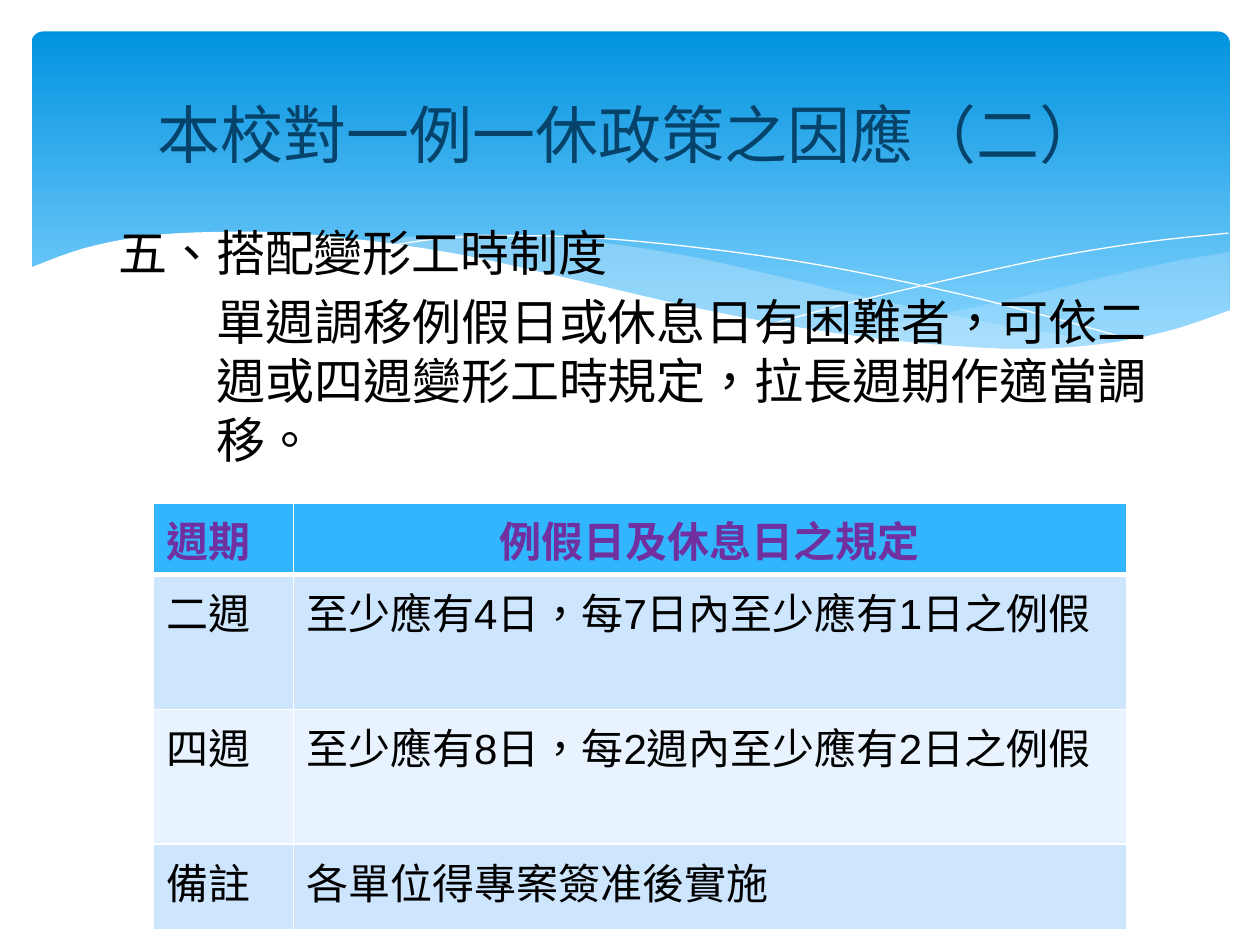
from dataclasses import dataclass
from lxml.etree import SubElement
from pptx import Presentation
from pptx.dml.color import RGBColor
from pptx.enum.shapes import MSO_SHAPE as Shape
from pptx.enum.text import MSO_ANCHOR as Anchor, PP_ALIGN as Align
from pptx.oxml import parse_xml
from pptx.oxml.ns import nsdecls, qn
from pptx.util import Inches, Pt


@dataclass(frozen=True)
class Theme:
    white: str = "FFFFFF"
    black: str = "000000"
    sky_top: str = "0293E0"
    sky_bottom: str = "83D3FE"
    mist: str = "C6E7FC"
    title: str = "06436B"
    header_text: str = "7030A0"
    header_fill: str = "31B6FD"
    bands: tuple = ("CEE5FE", "E8F3FF")
    font: str = "Arial"
    header_font: str = "Calibri"
    language: str = "zh-TW"
    title_size: int = 36
    body_size: int = 28
    table_size: int = 24


T = Theme()

RIGHT_WAVE_TOP = [(9.76, 2), (9.35, 2.07), (8.76, 2.2), (8.05, 2.37), (7.29, 2.53), (6.61, 2.65)]
RIGHT_WAVE_BASE = [(6.61, 2.65), (7.18, 2.73), (7.69, 2.77), (8.24, 2.77), (8.81, 2.73),
                   (9.28, 2.64), (9.76, 2.47)]
MID_WAVE_TOP = [(8.93, 2.73), (8.07, 2.6), (7.06, 2.4), (6.29, 2.22), (5.55, 2.05), (4.89, 1.94),
                (4.2, 1.87), (3.61, 1.86), (2.86, 1.91)]
MID_WAVE_BASE = [(2.86, 1.91), (3.62, 2.03), (4.49, 2.22), (5.3, 2.4), (6.01, 2.55), (6.8, 2.68),
                 (7.48, 2.76), (8.07, 2.79), (8.48, 2.78), (8.93, 2.73)]
FALLING_LINE = [(3.09, 1.95), (3.53, 1.89), (4.16, 1.87), (4.89, 1.9), (5.82, 2), (6.65, 2.13),
                (7.6, 2.33), (8.31, 2.51), (9.07, 2.72)]
RISING_LINE = [(6.13, 2.57), (6.72, 2.41), (7.48, 2.23), (8.36, 2.04), (9.1, 1.92), (9.75, 1.85)]
FRONT_WAVE = [(9.77, 2.46), (9.3, 2.62), (8.75, 2.73), (8.09, 2.77), (7.26, 2.72), (6.47, 2.62),
              (5.55, 2.45), (4.47, 2.2), (3.65, 2.02), (2.92, 1.91), (2.3, 1.85), (1.77, 1.84),
              (1.19, 1.87), (0.67, 1.97), (0.23, 2.13)]
FRONT_BASE = [(0.23, 3.29), (9.77, 3.29)]

ROWS = [
    (0.57, "週期", "例假日及休息日之規定"),
    (1.07, "二週", "至少應有4日，每7日內至少應有1日之例假"),
    (1.07, "四週", "至少應有8日，每2週內至少應有2日之例假"),
    (0.68, "備註", "各單位得專案簽准後實施"),
]


def rgb(color):
    return RGBColor.from_string(color)


def smooth_curve(points, steps=5):
    padded = [points[0], *points, points[-1]]
    curve = [points[0]]
    for a, b, c, d in zip(padded, padded[1:], padded[2:], padded[3:]):
        for i in range(1, steps + 1):
            t = i / steps
            curve.append(tuple(
                (2 * q + (r - p) * t + (2 * p - 5 * q + 4 * r - s) * t ** 2
                 + (3 * q - p - 3 * r + s) * t ** 3) / 2
                for p, q, r, s in zip(a, b, c, d)))
    return curve


def set_solid(sp, color, opacity=100):
    sp.fill.solid()
    sp.fill.fore_color.rgb = rgb(color)
    if opacity < 100:
        clr = sp.fill._xPr.find(qn("a:solidFill"))[0]
        SubElement(clr, qn("a:alpha")).set("val", str(opacity * 1000))


def add_path(s, box, points, closed=True):
    left, top = box[:2]
    pts = [(Inches(left + x), Inches(top + y)) for x, y in points]
    fb = s.shapes.build_freeform(*pts[0], scale=1.0)
    fb.add_line_segments(pts[1:], close=closed)
    sp = fb.convert_to_shape()
    sp.shadow.inherit = False
    return sp


def add_banner(s, box):
    left, top, width, height = box
    sp = s.shapes.add_shape(Shape.ROUNDED_RECTANGLE, Inches(left + 0.25), Inches(top + 0.25),
                            Inches(width - 0.49), Inches(height - 0.6))
    sp.adjustments[0] = 0.034
    sp.shadow.inherit = False
    sp.line.fill.background()
    sp.fill.gradient()
    sp.fill.gradient_angle = 270
    stops = zip(sp.fill.gradient_stops, (0, 0.9), (T.sky_top, T.sky_bottom))
    for stop, position, color in stops:
        stop.position = position
        stop.color.rgb = rgb(color)

    right_wave = smooth_curve(RIGHT_WAVE_TOP) + smooth_curve(RIGHT_WAVE_BASE)
    mid_wave = smooth_curve(MID_WAVE_TOP) + smooth_curve(MID_WAVE_BASE)
    for points, opacity in ((right_wave, 29), (mid_wave, 40)):
        sp = add_path(s, box, points)
        set_solid(sp, T.mist, opacity)
        sp.line.fill.background()
    for points in (FALLING_LINE, RISING_LINE):
        sp = add_path(s, box, smooth_curve(points), closed=False)
        sp.fill.background()
        sp.line.color.rgb = rgb(T.white)
        sp.line.width = Pt(0)
    sp = add_path(s, box, smooth_curve(FRONT_WAVE) + FRONT_BASE)
    set_solid(sp, T.white)
    sp.line.fill.background()


def write_text(p, text, color, **font):
    r = p.add_run()
    r.text = text
    r.font.color.rgb = rgb(color)
    r._r.get_or_add_rPr().set("lang", T.language)
    for name, value in font.items():
        setattr(r.font, name, value)


def add_text_frame(s, box, anchor):
    tf = s.shapes.add_textbox(*map(Inches, box)).text_frame
    tf.word_wrap = True
    tf.vertical_anchor = anchor
    return tf


def add_title(s, box):
    p = add_text_frame(s, box, Anchor.MIDDLE).paragraphs[0]
    p.alignment = Align.CENTER
    write_text(p, "本校對一例一休政策之因應（二）", T.title, name=T.font, size=Pt(T.title_size))


def add_body(s, box):
    tf = add_text_frame(s, box, Anchor.TOP)
    heading, detail = tf.paragraphs[0], tf.add_paragraph()
    detail._p.get_or_add_pPr().set("marL", str(Inches(0.78)))
    texts = ("五、搭配變形工時制度",
             "單週調移例假日或休息日有困難者，可依二週或四週變形工時規定，拉長週期作適當調移。")
    for p, text in zip((heading, detail), texts):
        p.space_before = Pt(T.body_size * 0.2)
        write_text(p, text, T.black, name=T.font, size=Pt(T.body_size))


def set_borders(cell, widths):
    tc_pr = cell._tc.get_or_add_tcPr()
    for i, (side, width) in enumerate(widths.items()):
        tc_pr.insert(i, parse_xml(
            f'<a:ln{side} {nsdecls("a")} w="{Pt(width)}"><a:solidFill>'
            f'<a:srgbClr val="{T.white}"/></a:solidFill></a:ln{side}>'))


def add_rules_table(s, box):
    table = s.shapes.add_table(len(ROWS), 2, *map(Inches, box)).table
    for column, width in zip(table.columns, (1.11, box[2] - 1.11)):
        column.width = Inches(width)
    header_font = {"name": T.header_font, "size": Pt(T.table_size), "bold": True}
    cell_font = {"name": T.font, "size": Pt(T.table_size), "bold": False}
    for i, (height, *texts) in enumerate(ROWS):
        header = i == 0
        table.rows[i].height = Inches(height)
        for j, text in enumerate(texts):
            cell = table.cell(i, j)
            set_solid(cell, T.header_fill if header else T.bands[(i - 1) % 2])
            set_borders(cell, {"L": 1, "R": 1, "T": 3 if i == 1 else 1, "B": 3 if header else 1})
            p = cell.text_frame.paragraphs[0]
            p.alignment = Align.CENTER if header and j == 1 else Align.LEFT
            write_text(p, text, T.header_text if header else T.black,
                       **(header_font if header else cell_font))


def main():
    prs = Presentation()
    prs.slide_width, prs.slide_height = Inches(10), Inches(7.5)
    s = prs.slides.add_slide(prs.slide_layouts[6])
    add_banner(s, (0, 0, 10, 3.3))
    add_body(s, (0.84, 1.72, 8.39, 5.12))
    add_title(s, (0.5, 0.37, 9, 1.37))
    add_rules_table(s, (1.22, 3.99, 7.72, sum(row[0] for row in ROWS)))
    prs.save("out.pptx")


if __name__ == "__main__":
    main()
